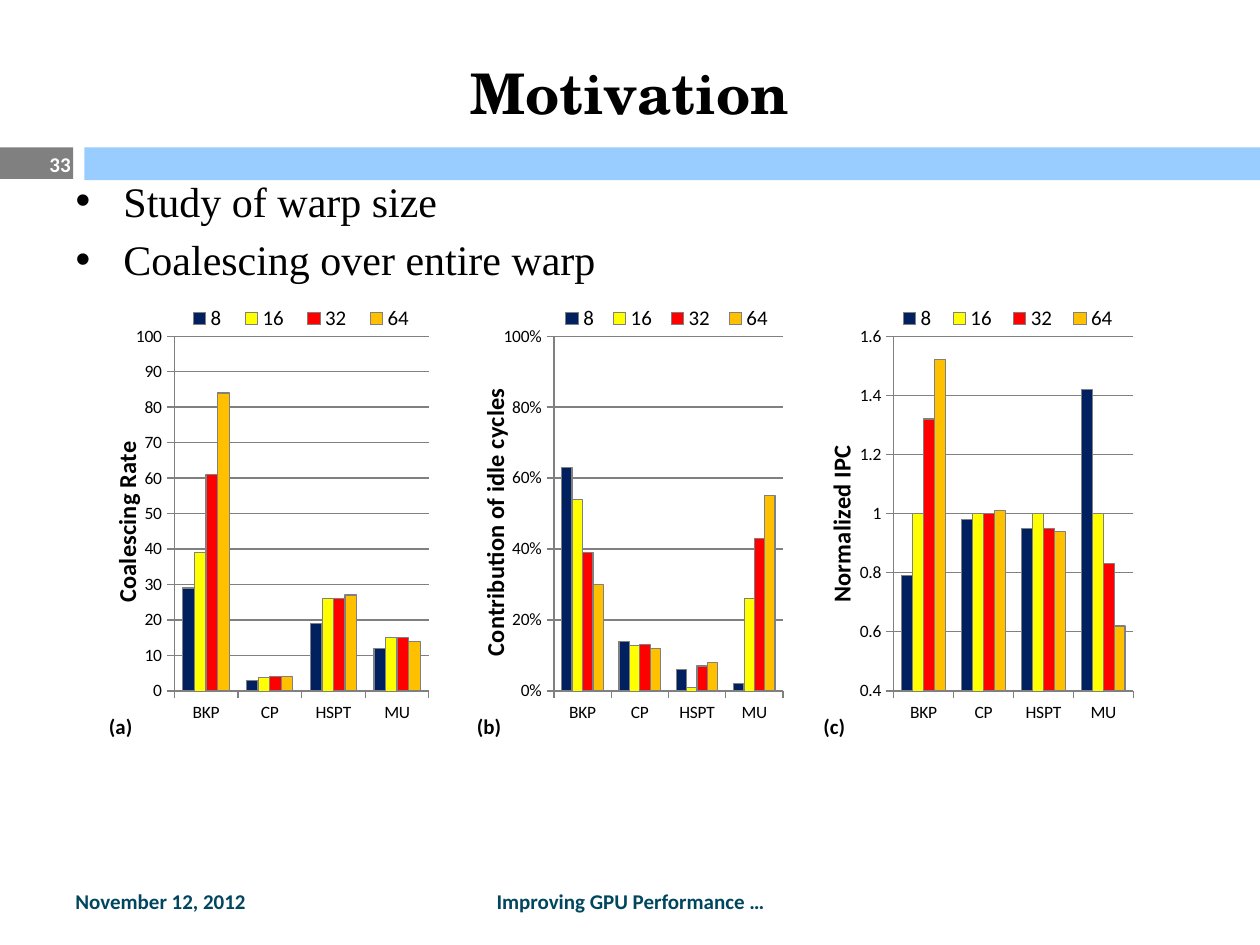
from lxml import etree
from pptx import Presentation
from pptx.chart.data import CategoryChartData
from pptx.dml.color import RGBColor
from pptx.enum import chart as ch, shapes, text
from pptx.oxml.ns import qn
from pptx.util import Inches, Pt

BLACK = RGBColor(0x00, 0x00, 0x00)
WHITE = RGBColor(0xFF, 0xFF, 0xFF)
GRAY = RGBColor(0x80, 0x80, 0x80)
SKY = RGBColor(0x99, 0xCC, 0xFF)
TEAL = RGBColor(0x01, 0x46, 0x5F)

# Content
TITLE = "Motivation"
BULLETS = ["Study of warp size", "Coalescing over entire warp"]
BANDS = [(0, 1.17, 0.58, 0.25, GRAY), (0.67, 1.17, 9.33, 0.26, SKY)]
LABELS = [
    ("33", (0, 1.1, 0.66, 0.4), text.PP_ALIGN.RIGHT, WHITE),
    ("November 12, 2012", (0.5, 6.95, 2.33, 0.4), text.PP_ALIGN.LEFT, TEAL),
    ("Improving GPU Performance …", (3.42, 6.95, 3.17, 0.4),
     text.PP_ALIGN.CENTER, TEAL),
]
BENCHMARKS = ["BKP", "CP", "HSPT", "MU"]
WARPS = [  # warp size, colour, outline width
    ("8", RGBColor(0x00, 0x20, 0x60), 0.75),
    ("16", RGBColor(0xFF, 0xFF, 0x00), 0.25),
    ("32", RGBColor(0xFF, 0x00, 0x00), 0.75),
    ("64", RGBColor(0xFF, 0xC0, 0x00), 0.75),
]
CHART_TOP, CHART_HEIGHT = 2.42, 3.5
CHARTS = [
    dict(name="(a)", axis="Coalescing Rate", left=0.83, width=2.58,
         scale=(0, 100, 10), fmt="General", plot_x=0.213, axis_y=0.3,
         legend=(0.22, 0.77),
         rows=[(29, 3, 19, 12), (39, 4, 26, 15),
               (61, 4, 26, 15), (84, 4, 27, 14)]),
    dict(name="(b)", axis="Contribution of idle cycles", left=3.75, width=2.47,
         scale=(0, 1, 0.2), fmt="0%", plot_x=0.261, axis_y=0.18,
         legend=(0.26, 0.73),
         rows=[(0.63, 0.14, 0.06, 0.02), (0.54, 0.13, 0.01, 0.26),
               (0.39, 0.13, 0.07, 0.43), (0.3, 0.12, 0.08, 0.55)]),
    dict(name="(c)", axis="Normalized IPC", left=6.5, width=2.5,
         scale=(0.4, 1.6, 0.2), fmt="General", plot_x=0.236, axis_y=0.31,
         legend=(0.22, 0.76),
         rows=[(0.79, 0.98, 0.95, 1.42), (1, 1, 1, 1),
               (1.32, 1, 0.95, 0.83), (1.52, 1.01, 0.94, 0.62)]),
]


def write(p, words, size=12, font="Calibri", color=BLACK, bold=True, align=None):
    r = p.add_run()
    r.text = words
    r.font.size, r.font.name, r.font.bold = Pt(size), font, bold
    r.font.color.rgb = color
    if align is not None:
        p.alignment = align


def place(sp, left, top, width, height):
    sp.left, sp.top = Inches(left), Inches(top)
    sp.width, sp.height = Inches(width), Inches(height)


def set_layout(parent, index, inner=False, **fractions):
    """Give a chart part a manual layout in fractions of the chart."""
    for old in parent.findall(qn("c:layout")):
        parent.remove(old)
    layout = etree.Element(qn("c:layout"))
    manual = etree.SubElement(layout, qn("c:manualLayout"))
    if inner:
        etree.SubElement(manual, qn("c:layoutTarget")).set("val", "inner")
    for key in "xy":
        etree.SubElement(manual, qn(f"c:{key}Mode")).set("val", "edge")
    for key, value in fractions.items():
        etree.SubElement(manual, qn(f"c:{key}")).set("val", str(value))
    parent.insert(index, layout)


def add_bar_chart(s, name, axis, left, width, scale, fmt, plot_x, axis_y,
                  legend, rows):
    data = CategoryChartData(number_format=fmt)
    data.categories = BENCHMARKS
    for (warp, _, _), row in zip(WARPS, rows):
        data.add_series(warp, row)
    chart = s.shapes.add_chart(
        ch.XL_CHART_TYPE.COLUMN_CLUSTERED, Inches(left), Inches(CHART_TOP),
        Inches(width), Inches(CHART_HEIGHT), data).chart
    chart.font.size, chart.font.name = Pt(10), "Calibri"
    chart.font.color.rgb = BLACK

    # Bars
    plot = chart.plots[0]
    plot.gap_width, plot.overlap, plot.vary_by_categories = 150, 0, False
    for series, (_, color, line) in zip(plot.series, WARPS):
        series.format.fill.solid()
        series.format.fill.fore_color.rgb = color
        series.format.line.color.rgb = GRAY
        series.format.line.width = Pt(line)

    # Axes
    values = chart.value_axis
    values.minimum_scale, values.maximum_scale, values.major_unit = scale
    values.tick_labels.number_format = fmt
    values.tick_labels.number_format_is_linked = False
    values.has_major_gridlines = True
    values.major_gridlines.format.line.color.rgb = GRAY
    for ax in (values, chart.category_axis):
        ax.major_tick_mark = ch.XL_TICK_MARK.OUTSIDE
        ax.format.line.color.rgb = GRAY
    tf = values.axis_title.text_frame
    write(tf.paragraphs[0], axis, size=14)
    tf._txBody.find(qn("a:bodyPr")).set("rot", "-5400000")
    set_layout(values.axis_title._element, 1, x=0, y=axis_y)

    # Name, legend and plot positions
    chart.has_title = True
    title = chart.chart_title
    write(title.text_frame.paragraphs[0], name)
    set_layout(title._element, 1, x=0, y=0.92)
    title._element.find(qn("c:overlay")).set("val", "1")
    chart.has_legend = True
    chart.legend.position = ch.XL_LEGEND_POSITION.TOP
    chart.legend.include_in_layout = True
    chart.legend.font.size = Pt(12)
    set_layout(chart.legend._element, 1, x=legend[0], y=0, w=legend[1], h=0.06)
    area = chart._chartSpace.chart.plotArea
    set_layout(area, 0, inner=True, x=plot_x, y=0.07,
               w=round(1 - plot_x, 3), h=0.81)

    # White border around the chart
    border = etree.Element(qn("c:spPr"))
    etree.SubElement(border, qn("a:noFill"))
    line = etree.SubElement(border, qn("a:ln"), w=str(Pt(0.75)))
    fill = etree.SubElement(line, qn("a:solidFill"))
    etree.SubElement(fill, qn("a:srgbClr"), val=str(WHITE))
    chart._chartSpace.chart.addnext(border)


prs = Presentation()
prs.slide_width, prs.slide_height = Inches(10), Inches(7.5)
s = prs.slides.add_slide(prs.slide_layouts[1])

# Bands under the title
for *box, color in BANDS:
    sp = s.shapes.add_shape(shapes.MSO_SHAPE.RECTANGLE, *map(Inches, box))
    sp.fill.solid()
    sp.fill.fore_color.rgb = color
    sp.line.fill.background()
    sp.shadow.inherit = False

# Title
title = s.shapes.title
place(title, 0.5, 0.3, 9, 0.87)
title.text_frame.vertical_anchor = text.MSO_ANCHOR.MIDDLE
write(title.text_frame.paragraphs[0], TITLE, size=32, font="TeX Gyre Schola",
      align=text.PP_ALIGN.CENTER)

# Bullet list
body = s.placeholders[1]
place(body, 0.5, 1.33, 9, 5.37)
tf = body.text_frame
tf.auto_size = text.MSO_AUTO_SIZE.NONE
tf.margin_top = Inches(0.06)
for i, words in enumerate(BULLETS):
    p = tf.add_paragraph() if i else tf.paragraphs[0]
    pPr = p._p.get_or_add_pPr()
    pPr.set("marL", str(Inches(0.38)))
    pPr.set("indent", str(-Inches(0.38)))
    etree.SubElement(pPr, qn("a:buChar")).set("char", "•")
    p.space_before = Pt(4.8 if i else 0)
    write(p, words, size=24, font="Times New Roman", bold=False)

# Charts
for chart_content in CHARTS:
    add_bar_chart(s, **chart_content)

# Slide number, date and footer
for words, box, align, color in LABELS:
    tf = s.shapes.add_textbox(*map(Inches, box)).text_frame
    tf.word_wrap = True
    tf.vertical_anchor = text.MSO_ANCHOR.MIDDLE
    write(tf.paragraphs[0], words, color=color, align=align)

prs.save("out.pptx")
